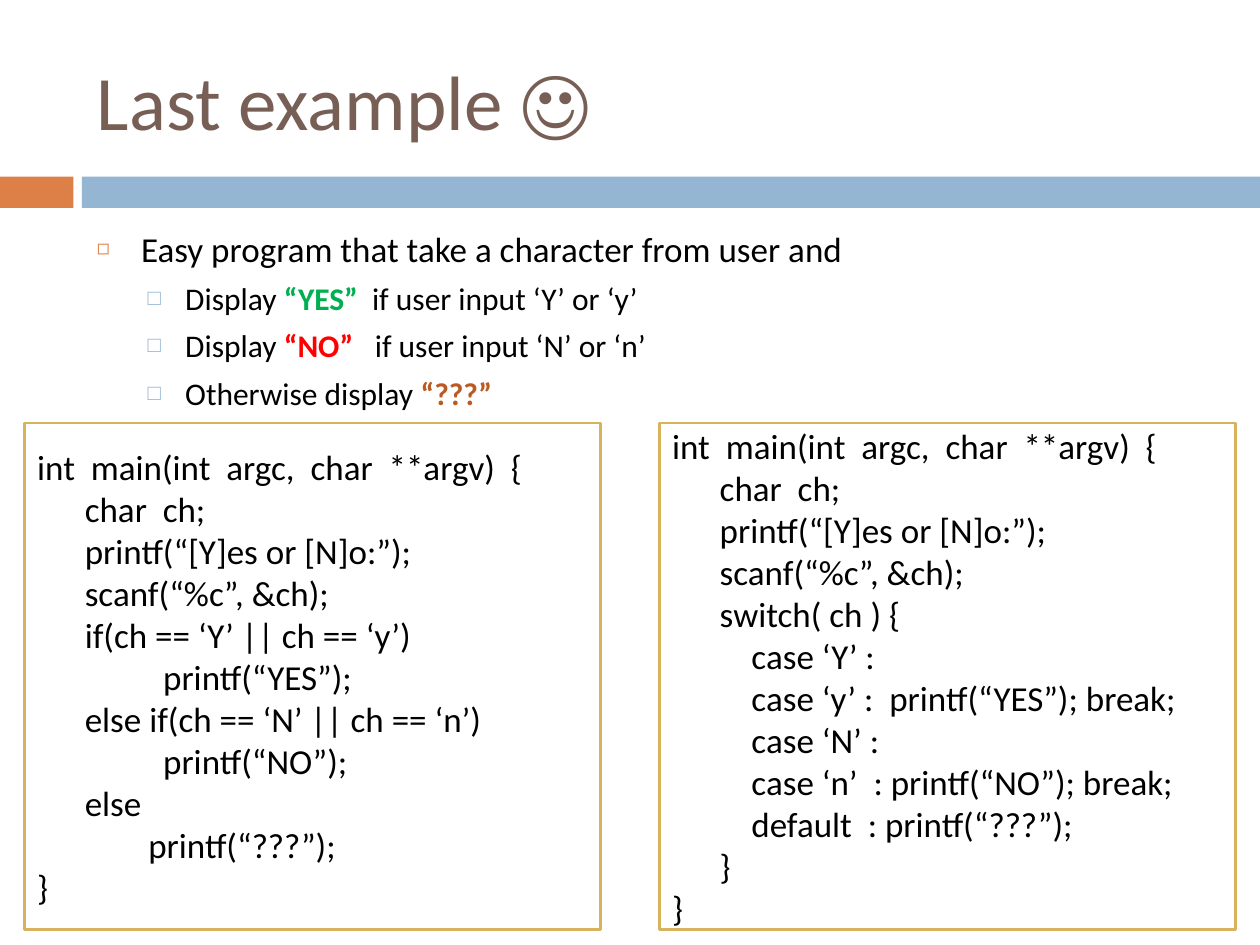
from lxml import etree
from pptx import Presentation
from pptx import util as u
from pptx.dml.color import RGBColor
from pptx.enum import shapes, text
from pptx.oxml.ns import qn

COLORS = {
    "title": "775F55", "text": "000000", "orange": "DD8047", "blue": "94B6D2",
    "yes": "00B050", "no": "FF0000", "other": "B95B22",
    "box": "FFFFFF", "border": "D8B25C",
}


def add_run(paragraph, words, size, color="text", bold=False):
    run = paragraph.add_run()
    run.text = words
    run.font.name = "Calibri"
    run.font.size = u.Pt(size)
    run.font.bold = bold
    run.font.color.rgb = RGBColor.from_string(COLORS[color])


def add_box(slide, left, top, width, height, color):
    shape = slide.shapes.add_shape(
        shapes.MSO_SHAPE.RECTANGLE, u.Cm(left), u.Cm(top), u.Cm(width), u.Cm(height))
    shape.shadow.inherit = False
    shape.fill.solid()
    shape.fill.fore_color.rgb = RGBColor.from_string(COLORS[color])
    shape.line.fill.background()
    return shape


presentation = Presentation()
presentation.slide_width = u.Cm(25.4)
presentation.slide_height = u.Cm(19.05)
slide = presentation.slides.add_slide(presentation.slide_layouts[1])

# Band under the title
add_box(slide, 0, 3.56, 1.48, 0.63, "orange")
add_box(slide, 1.65, 3.56, 23.75, 0.63, "blue")

# Title and body placeholders
title, body = slide.placeholders
for placeholder, top, height, anchor in (
        (title, 0.64, 2.74, text.MSO_ANCHOR.MIDDLE),
        (body, 4.45, 12.5, text.MSO_ANCHOR.TOP)):
    placeholder.left, placeholder.top = u.Cm(1.7), u.Cm(top)
    placeholder.width, placeholder.height = u.Cm(22.66), u.Cm(height)
    placeholder.text_frame.auto_size = text.MSO_AUTO_SIZE.NONE
    placeholder.text_frame.vertical_anchor = anchor

paragraph = title.text_frame.paragraphs[0]
paragraph.alignment = text.PP_ALIGN.LEFT
add_run(paragraph, "Last example ☺", 44, "title")

# Level: text size, space before, left margin, hanging, bullet, its colour and percent
LEVELS = [
    (20, 7, 0.89, 0.89, "◻", "orange", 60),
    (18, 5.5, 1.78, 0.76, "□", "blue", 70),
]
TASK = [
    (0, [("Easy program that take a character from user and", "text")]),
    (1, [("Display ", "text"), ("“YES”  ", "yes"), ("if user input ‘Y’ or ‘y’", "text")]),
    (1, [("Display ", "text"), ("“NO”", "no"), ("   if user input ‘N’ or ‘n’", "text")]),
    (1, [("Otherwise display ", "text"), ("“???”", "other")]),
]
for index, (level, parts) in enumerate(TASK):
    frame = body.text_frame
    paragraph = frame.add_paragraph() if index else frame.paragraphs[0]
    size, before, margin, hanging, bullet, color, percent = LEVELS[level]
    paragraph.level = level
    paragraph.space_before = u.Pt(before)
    properties = paragraph._p.get_or_add_pPr()
    properties.set("marL", str(u.Cm(margin)))
    properties.set("indent", str(-u.Cm(hanging)))
    bullet_color = etree.SubElement(properties, qn("a:buClr"))
    etree.SubElement(bullet_color, qn("a:srgbClr"), val=COLORS[color])
    etree.SubElement(properties, qn("a:buSzPct"), val=str(percent * 1000))
    etree.SubElement(properties, qn("a:buChar"), char=bullet)
    for words, part_color in parts:
        add_run(paragraph, words, size, part_color, bold=part_color != "text")

# Two versions of the program; each line carries its indent in cm
STATEMENT, CASE, LAST_PRINT, PRINT = 0.96, 1.6, 2.24, 2.54
OPENING = [
    (0, "int  main(int  argc,  char  **argv)  {"),
    (STATEMENT, "char  ch;"),
    (STATEMENT, "printf(“[Y]es or [N]o:”);"),
    (STATEMENT, "scanf(“%c”, &ch);"),
]
IF_VERSION = OPENING + [
    (STATEMENT, "if(ch == ‘Y’ || ch == ‘y’)"),
    (PRINT, "printf(“YES”);"),
    (STATEMENT, "else if(ch == ‘N’ || ch == ‘n’)"),
    (PRINT, "printf(“NO”);"),
    (STATEMENT, "else"),
    (LAST_PRINT, "printf(“???”);"),
    (0, "}"),
]
SWITCH_VERSION = OPENING + [
    (STATEMENT, "switch( ch ) {"),
    (CASE, "case ‘Y’ :"),
    (CASE, "case ‘y’ :  printf(“YES”); break;"),
    (CASE, "case ‘N’ :"),
    (CASE, "case ‘n’  : printf(“NO”); break;"),
    (CASE, "default  : printf(“???”);"),
    (STATEMENT, "}"),
    (0, "}"),
]
for left, code in ((0.5, IF_VERSION), (13.3, SWITCH_VERSION)):
    code_box = add_box(slide, left, 8.53, 11.61, 10.21, "box")
    code_box.line.color.rgb = RGBColor.from_string(COLORS["border"])
    code_box.line.width = u.Pt(1.5)
    frame = code_box.text_frame
    frame.word_wrap = True
    frame.vertical_anchor = text.MSO_ANCHOR.MIDDLE
    for index, (indent, line) in enumerate(code):
        paragraph = frame.add_paragraph() if index else frame.paragraphs[0]
        paragraph.alignment = text.PP_ALIGN.LEFT
        paragraph._p.get_or_add_pPr().set("marL", str(u.Cm(indent)))
        add_run(paragraph, line, 20)

presentation.save("out.pptx")
